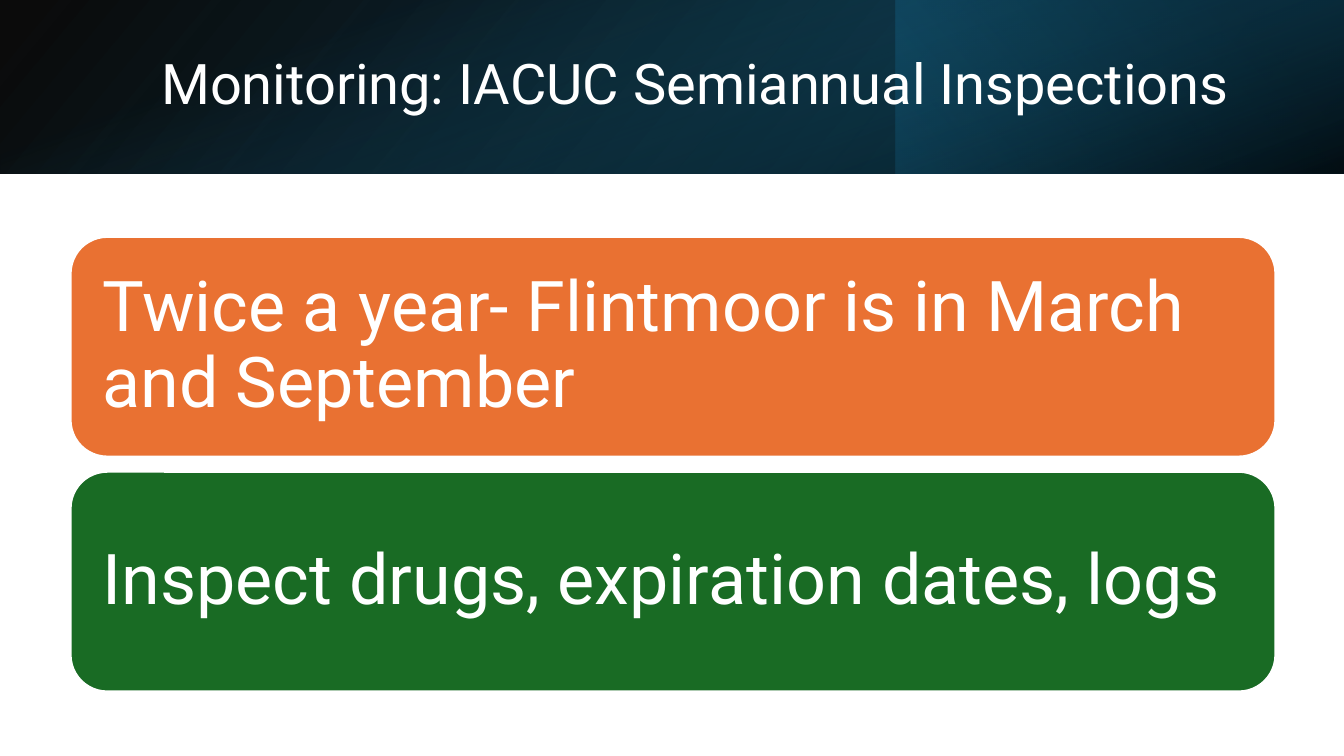
from dataclasses import dataclass

from lxml import etree
from pptx import Presentation
from pptx.dml.color import RGBColor as RGB
from pptx.enum.shapes import MSO_SHAPE as Kind
from pptx.enum.text import MSO_ANCHOR as Anchor, PP_ALIGN as Align
from pptx.oxml.ns import qn
from pptx.shapes.autoshape import Shape
from pptx.slide import Slide
from pptx.util import Inches, Pt

WIDE, HIGH = 13.33, 7.5
BAND = 1.72


@dataclass(frozen=True)
class Theme:
    font: str = "Roboto"
    white: str = "FFFFFF"
    black: str = "000000"
    navy: str = "104862"
    deep: str = "0B3041"
    teal: str = "156082"
    orange: str = "E97132"
    green: str = "196B24"
    title: int = 40
    body: int = 50
    edge: float = 1.5


@dataclass(frozen=True)
class Box:
    left: float
    top: float
    width: float
    height: float


@dataclass(frozen=True)
class Stop:
    place: int
    color: str
    alpha: int = 100


@dataclass(frozen=True)
class Layer:
    box: Box
    stops: tuple[Stop, Stop]
    angle: int
    turn: int = 0
    flip: bool = False


@dataclass(frozen=True)
class Card:
    text: str
    color: str


THEME = Theme()
LAYERS = (
    Layer(Box(0, 0, WIDE, BAND),
          (Stop(0, THEME.black, 96), Stop(100, THEME.navy)), 140, flip=True),
    Layer(Box(WIDE * 2 / 3, 0, WIDE / 3, BAND),
          (Stop(19, THEME.deep, 68), Stop(100, THEME.teal, 79)), 320, 180),
    Layer(Box((WIDE - BAND) / 2, (BAND - WIDE) / 2, BAND, WIDE),
          (Stop(23, THEME.teal, 0), Stop(99, THEME.black, 74)), 340, 90),
)
TITLE = Box(1.5, 0.38, 10.98, 0.96)
CARDS = (
    Card("Twice a year- Flintmoor is in March and September", THEME.orange),
    Card("Inspect drugs, expiration dates, logs", THEME.green),
)
FIRST = Box(0.7, 2.35, 11.95, 2.18)
PITCH = 2.33
INSET = 0.21


def add_box(slide: Slide, kind: Kind, box: Box) -> Shape:
    shape = slide.shapes.add_shape(
        kind, Inches(box.left), Inches(box.top),
        Inches(box.width), Inches(box.height))
    shape.shadow.inherit = False
    return shape


def add_layer(slide: Slide, layer: Layer) -> None:
    """Draw a borderless gradient with see-through stops."""
    shape = add_box(slide, Kind.RECTANGLE, layer.box)
    shape.rotation = layer.turn
    shape.line.fill.background()
    shape.fill.gradient()
    # The public angle runs counter-clockwise.
    shape.fill.gradient_angle = 360 - layer.angle
    props = shape.element.spPr
    if layer.flip:
        props.find(qn("a:xfrm")).set("flipH", "1")
    for stop, part in zip(layer.stops, shape.fill.gradient_stops):
        part.position = stop.place / 100
        part.color.rgb = RGB.from_string(stop.color)
    for stop, color in zip(layer.stops, props.iter(qn("a:srgbClr"))):
        etree.SubElement(color, qn("a:alpha"), val=str(stop.alpha * 1000))


def set_text(shape: Shape, text: str, size: int) -> None:
    frame = shape.text_frame
    frame.text = text
    frame.word_wrap = True
    frame.vertical_anchor = Anchor.MIDDLE
    para = frame.paragraphs[0]
    para.alignment = Align.LEFT
    para.line_spacing = 0.9
    font = para.runs[0].font
    font.name = THEME.font
    font.size = Pt(size)
    font.color.rgb = RGB.from_string(THEME.white)


def add_title(slide: Slide, text: str) -> None:
    shape = slide.shapes.add_textbox(
        Inches(TITLE.left), Inches(TITLE.top),
        Inches(TITLE.width), Inches(TITLE.height))
    set_text(shape, text, THEME.title)


def add_card(slide: Slide, card: Card, row: int) -> None:
    box = Box(FIRST.left, FIRST.top + row * PITCH, FIRST.width, FIRST.height)
    shape = add_box(slide, Kind.ROUNDED_RECTANGLE, box)
    shape.fill.solid()
    shape.fill.fore_color.rgb = RGB.from_string(card.color)
    shape.line.color.rgb = RGB.from_string(THEME.white)
    shape.line.width = Pt(THEME.edge)
    frame = shape.text_frame
    frame.margin_left = frame.margin_right = Inches(INSET)
    frame.margin_top = frame.margin_bottom = Inches(INSET)
    set_text(shape, card.text, THEME.body)


def main() -> None:
    deck = Presentation()
    deck.slide_width, deck.slide_height = Inches(WIDE), Inches(HIGH)
    slide = deck.slides.add_slide(deck.slide_layouts[6])
    for layer in LAYERS:
        add_layer(slide, layer)
    add_title(slide, "Monitoring: IACUC Semiannual Inspections")
    for row, card in enumerate(CARDS):
        add_card(slide, card, row)
    deck.save("out.pptx")


if __name__ == "__main__":
    main()
